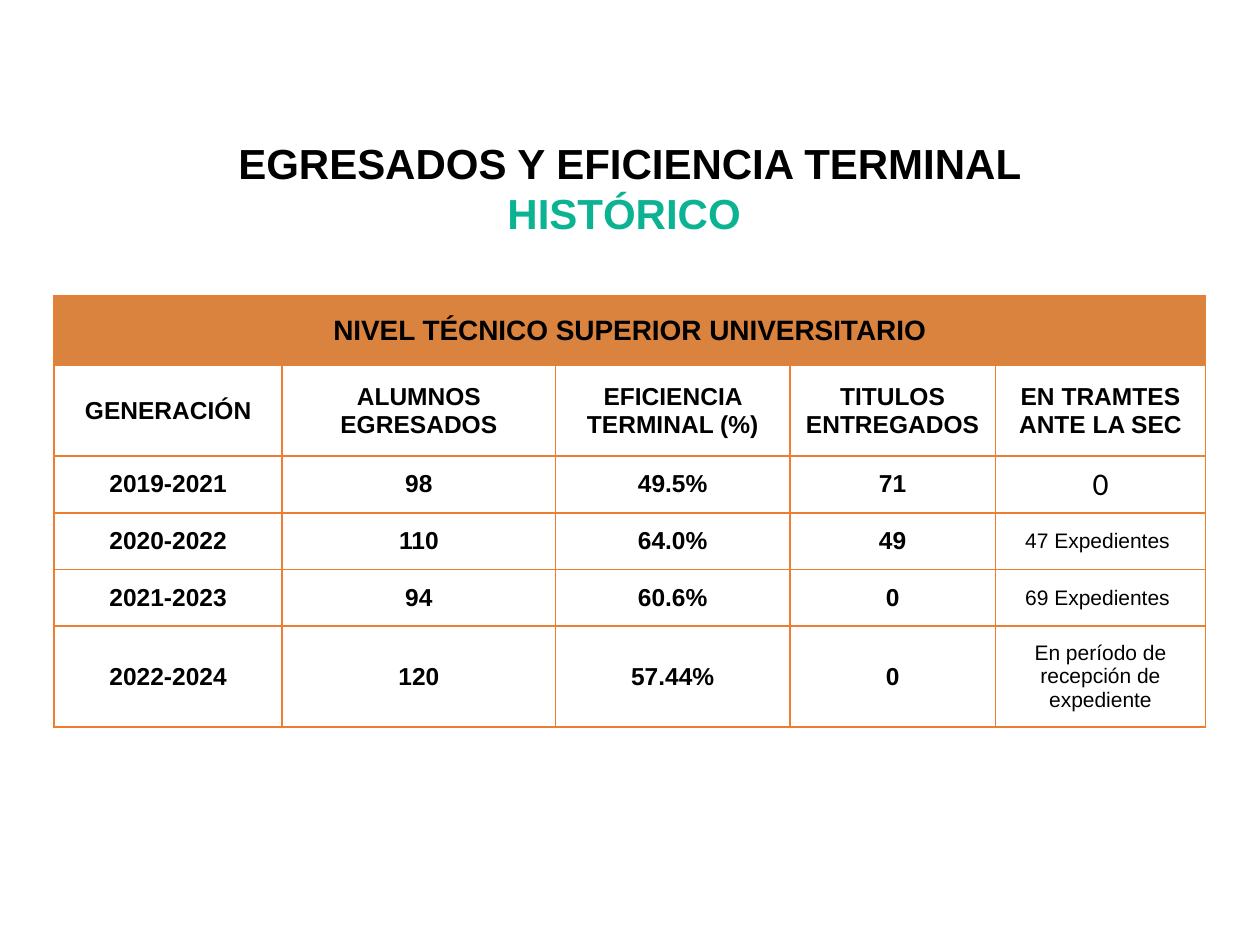
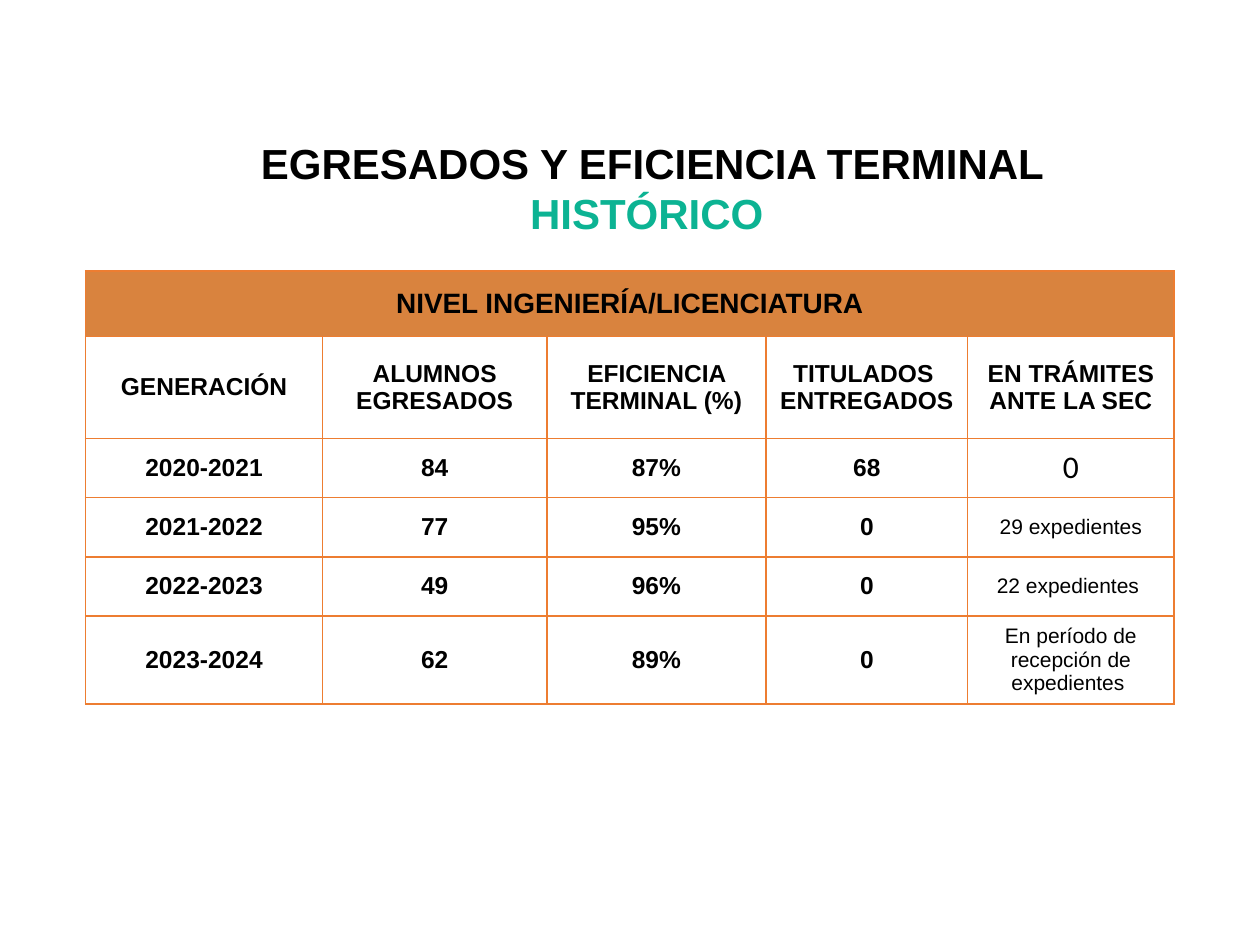
"""Build two slides on graduates and completion rates by level."""
from lxml import etree
from pptx import Presentation
from pptx.dml.color import RGBColor
from pptx.enum import text as t
from pptx.oxml import ns
from pptx.util import Inches, Pt

BLACK, WHITE, TEAL = "000000", "FFFFFF", "0CB393"
BAND, EDGE = "D9833E", "ED7D31"


def style(para, size, color=BLACK, bold=True, face="Arial"):
    para.alignment = t.PP_ALIGN.CENTER
    for run in para.runs:
        font = run.font
        font.size, font.bold, font.name = Pt(size), bold, face
        font.color.rgb = RGBColor.from_string(color)


def border(cell):
    props = cell._tc.get_or_add_tcPr()
    for side in ("a:lnL", "a:lnR", "a:lnT", "a:lnB"):
        line = etree.SubElement(props, ns.qn(side), w=str(Pt(1)))
        fill = etree.SubElement(line, ns.qn("a:solidFill"))
        etree.SubElement(fill, ns.qn("a:srgbClr"), val=EDGE)


levels = [
    {
        "title": 1.77, "left": 0.43, "top": 2.35,
        "cols": [1.81, 2.17, 1.86, 1.63, 1.67],
        "rows": [0.55, 0.72, 0.45, 0.45, 0.45, 0.8],
        "cells": [
            ["NIVEL TÉCNICO SUPERIOR UNIVERSITARIO"],
            ["GENERACIÓN", "ALUMNOS EGRESADOS", "EFICIENCIA TERMINAL (%)",
             "TITULOS\nENTREGADOS", "EN TRAMTES ANTE LA SEC"],
            ["2019-2021", "98", "49.5%", "71", "0"],
            ["2020-2022", "110", "64.0%", "49", "47 Expedientes "],
            ["2021-2023", "94", "60.6%", "0", "69 Expedientes "],
            ["2022-2024", "120", "57.44%", "0",
             "En período de recepción de expediente"],
        ],
    },
    {
        "title": 1.95, "left": 0.68, "top": 2.15,
        "cols": [1.88, 1.78, 1.74, 1.6, 1.64],
        "rows": [0.52, 0.81, 0.47, 0.47, 0.47, 0.7],
        "cells": [
            ["NIVEL INGENIERÍA/LICENCIATURA"],
            ["GENERACIÓN", "ALUMNOS EGRESADOS", "EFICIENCIA TERMINAL (%)",
             "TITULADOS \nENTREGADOS", "EN TRÁMITES ANTE LA SEC"],
            ["2020-2021", "84", "87%", "68", "0"],
            ["2021-2022", "77", "95%", "0", "29 expedientes"],
            ["2022-2023", "49", "96%", "0", "22 expedientes "],
            ["2023-2024", "62", "89%", "0",
             "En período de recepción de expedientes "],
        ],
    },
]

deck = Presentation()
deck.slide_width, deck.slide_height = Inches(10), Inches(7.5)

for level in levels:
    slide = deck.slides.add_slide(deck.slide_layouts[5])

    title = slide.shapes.title
    title.left, title.top = Inches(level["title"]), Inches(1.04)
    title.width, title.height = Inches(6.46), Inches(0.91)
    frame = title.text_frame
    frame.text = "EGRESADOS Y EFICIENCIA TERMINAL\nHISTÓRICO "
    frame.word_wrap = True
    frame.vertical_anchor = t.MSO_ANCHOR.TOP
    frame.auto_size = t.MSO_AUTO_SIZE.SHAPE_TO_FIT_TEXT
    for para, color in zip(frame.paragraphs, (BLACK, TEAL)):
        style(para, 24, color)

    cols, rows = level["cols"], level["rows"]
    table = slide.shapes.add_table(
        len(rows), len(cols), Inches(level["left"]), Inches(level["top"]),
        Inches(sum(cols)), Inches(sum(rows))).table
    table.first_row = table.horz_banding = False
    for col, width in zip(table.columns, cols):
        col.width = Inches(width)
    for row, height in zip(table.rows, rows):
        row.height = Inches(height)
    table.cell(0, 0).merge(table.cell(0, len(cols) - 1))

    for r, row in enumerate(table.rows):
        for cell in row.cells:
            border(cell)
            cell.fill.solid()
            cell.fill.fore_color.rgb = RGBColor.from_string(WHITE if r else BAND)
            cell.vertical_anchor = t.MSO_ANCHOR.MIDDLE
        for c, words in enumerate(level["cells"][r]):
            cell = table.cell(r, c)
            cell.text_frame.text = words
            for para in cell.text_frame.paragraphs:
                if r == 0:
                    style(para, 16)
                elif r == 1 or c < 4:
                    style(para, 14)
                elif words == "0":
                    style(para, 18, bold=False, face="Calibri")
                else:
                    style(para, 12, bold=False)

deck.save("out.pptx")
